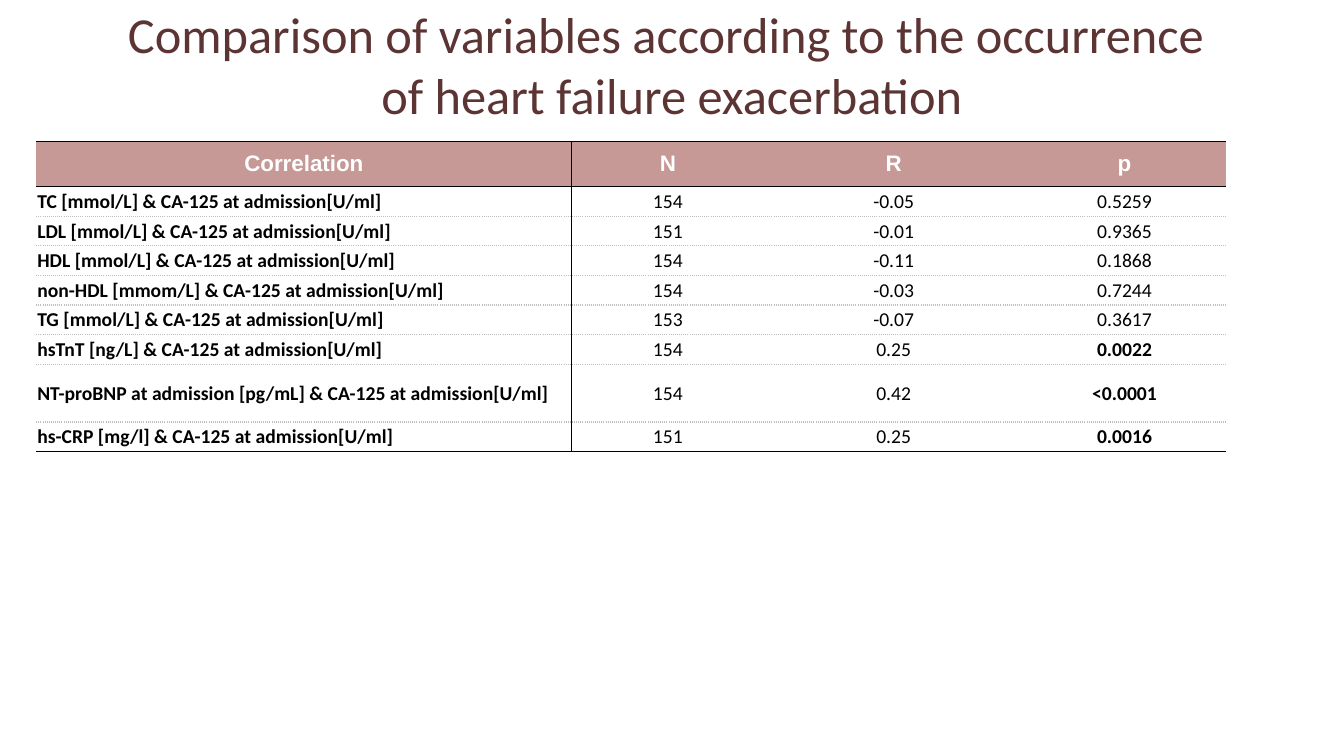
from lxml.etree import SubElement as Sub
from pptx import Presentation
from pptx.dml.color import RGBColor
from pptx.enum.text import MSO_ANCHOR as Anchor, PP_ALIGN as Align
from pptx.oxml.ns import qn
from pptx.util import Inches, Pt

HEADER = ["Correlation", "N", "R", "p"]
MARKER = " & CA-125 at admission[U/ml]"
RESULTS = [
    ("TC [mmol/L]", "154", "-0.05", "0.5259"),
    ("LDL [mmol/L]", "151", "-0.01", "0.9365"),
    ("HDL [mmol/L]", "154", "-0.11", "0.1868"),
    ("non-HDL [mmom/L]", "154", "-0.03", "0.7244"),
    ("TG [mmol/L]", "153", "-0.07", "0.3617"),
    ("hsTnT [ng/L]", "154", "0.25", "0.0022"),
    ("NT-proBNP at admission [pg/mL]", "154", "0.42", "<0.0001"),
    ("hs-CRP [mg/l]", "151", "0.25", "0.0016"),
]
SIGNIFICANT = {"0.0022", "<0.0001", "0.0016"}
COL_WIDTHS = [39.83, 14.33, 19.28, 15.08]
ROW_HEIGHTS = [6] + [3.92] * 6 + [7.65, 3.92]
SOLID = ("000000", "solid")
DOTTED = ("BFBFBF", "sysDot")


def rgb(code):
    return RGBColor.from_string(code)


def write(tf, text, size=14, font="Calibri", color="000000", bold=False,
          align=Align.CENTER):
    """Fill the frame with one paragraph; a newline is a line break."""
    tf.word_wrap = True
    p = tf.paragraphs[0]
    p.alignment = align
    for i, line in enumerate(text.split("\n")):
        if i:
            p.add_line_break()
        r = p.add_run()
        r.text = line
        r.font.size, r.font.name, r.font.bold = Pt(size), font, bold
        r.font.color.rgb = rgb(color)
    return p


def solid_fill(parent, color, alpha=100):
    fill = Sub(parent, qn("a:solidFill"))
    clr = Sub(fill, qn("a:srgbClr"), val=color)
    Sub(clr, qn("a:alpha"), val=str(alpha * 1000))


def add_glyph_effects(r):
    """Give a run a faint outline and a soft shadow."""
    rPr = r.font._element
    ln = rPr.makeelement(qn("a:ln"), {"w": str(Pt(0.75))})
    solid_fill(ln, "404040", 10)
    rPr.insert(0, ln)
    effects = rPr.makeelement(qn("a:effectLst"), {})
    shadow = Sub(effects, qn("a:outerShdw"), blurRad=str(Pt(3)),
                 dist=str(Pt(2)), dir="2700000", algn="tl")
    clr = Sub(shadow, qn("a:srgbClr"), val="000000")
    Sub(clr, qn("a:alpha"), val="43000")
    rPr.insert(2, effects)


def set_borders(cell, left=None, right=None, top=None, bottom=None):
    """Set each side from (colour, dash); None hides the side."""
    tcPr = cell._tc.get_or_add_tcPr()
    sides = [("lnL", left), ("lnR", right), ("lnT", top), ("lnB", bottom)]
    for i, (tag, style) in enumerate(sides):
        ln = tcPr.makeelement(qn(f"a:{tag}"), {"w": str(Pt(1))})
        tcPr.insert(i, ln)
        if style:
            color, dash = style
            solid_fill(ln, color)
            Sub(ln, qn("a:prstDash"), val=dash)
        else:
            Sub(ln, qn("a:noFill"))


class Deck:
    """Holds the slide and its grid of 100 columns by 100 rows."""
    title_color = "5B3433"
    header_fill = "C69896"

    def __init__(self):
        self.prs = prs = Presentation()
        prs.slide_width, prs.slide_height = Inches(13.33), Inches(7.5)
        self.s = prs.slides.add_slide(prs.slide_layouts[6])

    def cols(self, n):
        return round(self.prs.slide_width * n / 100)

    def rows(self, n):
        return round(self.prs.slide_height * n / 100)

    def box(self, x, y, w, h):
        return self.cols(x), self.rows(y), self.cols(w), self.rows(h)

    def title(self, text, *place):
        tf = self.s.shapes.add_textbox(*self.box(*place)).text_frame
        tf.vertical_anchor = Anchor.MIDDLE
        p = write(tf, text, size=36, color=self.title_color)
        for r in p.runs:
            add_glyph_effects(r)

    def header_cell(self, cell, text):
        write(cell.text_frame, text, size=16, font="Arial", color="FFFFFF",
              bold=True)
        cell.fill.solid()
        cell.fill.fore_color.rgb = rgb(self.header_fill)

    def body_cell(self, cell, text, is_label):
        write(cell.text_frame, text, bold=is_label or text in SIGNIFICANT,
              align=Align.LEFT if is_label else Align.CENTER)
        cell.margin_left = cell.margin_right = cell.margin_top = Inches(0.01)
        cell.margin_bottom = 0
        cell.fill.background()

    def table(self, x, y, data, widths, heights):
        place = self.box(x, y, sum(widths), sum(heights))
        table = self.s.shapes.add_table(len(data), len(widths), *place).table
        table.horz_banding = False
        for col, w in zip(table.columns, widths):
            col.width = self.cols(w)
        for row, h in zip(table.rows, heights):
            row.height = self.rows(h)
        last = len(data) - 1
        for i, values in enumerate(data):
            for j, text in enumerate(values):
                cell = table.cell(i, j)
                cell.vertical_anchor = Anchor.MIDDLE
                if i == 0:
                    self.header_cell(cell, text)
                else:
                    self.body_cell(cell, text, j == 0)
                set_borders(cell,
                            left=SOLID if j == 1 else None,
                            right=SOLID if j == 0 else None,
                            top=SOLID if i < 2 else DOTTED,
                            bottom=SOLID if i in (0, last) else DOTTED)


def main():
    deck = Deck()
    deck.title("Comparison of variables according to the occurrence \n"
               "of heart failure exacerbation", 0, 2, 100, 12.93)
    body = [(name + MARKER, *values) for name, *values in RESULTS]
    deck.table(2.7, 18.67, [HEADER, *body], COL_WIDTHS, ROW_HEIGHTS)
    deck.prs.save("out.pptx")


if __name__ == "__main__":
    main()
